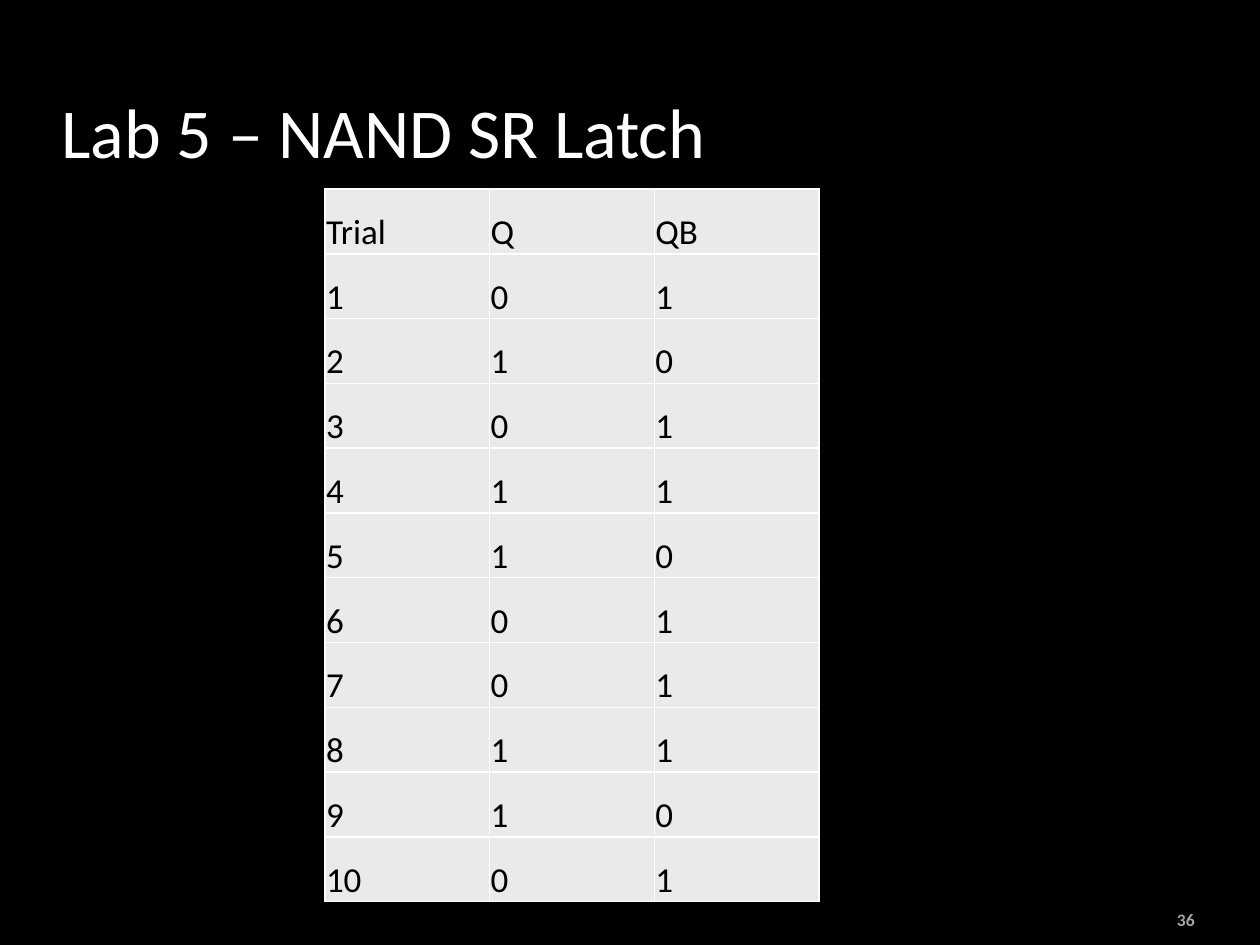
from lxml.etree import SubElement
from pptx import Presentation
from pptx.dml.color import RGBColor as Rgb
from pptx.enum.text import MSO_ANCHOR as Anchor, PP_ALIGN as Align
from pptx.oxml.ns import qn
from pptx.util import Pt

SCALE = 914400 / 126
FONT = "Calibri"
HUES = {"back": "000000", "title": "FFFFFF", "number": "A6A6A6",
        "cell": "E9EAEC", "text": "000000", "rule": "FFFFFF"}
ROWS = [("Trial", "Q", "QB"), ("1", "0", "1"), ("2", "1", "0"),
        ("3", "0", "1"), ("4", "1", "1"), ("5", "1", "0"),
        ("6", "0", "1"), ("7", "0", "1"), ("8", "1", "1"),
        ("9", "1", "0"), ("10", "0", "1")]


def px(num):
    """Turn px into EMU."""
    return round(num * SCALE)


def add_run(para, text, size, hue, bold=False):
    """Add one styled run to a paragraph."""
    run = para.add_run()
    run.text = text
    font = run.font
    font.name, font.size, font.bold = FONT, Pt(size), bold
    font.color.rgb = Rgb.from_string(HUES[hue])


def add_label(slide, box, text, size, hue, anchor, align, bold=False):
    """Place a line of text in its box."""
    frame = slide.shapes.add_textbox(*map(px, box)).text_frame
    frame.word_wrap = True
    frame.vertical_anchor = anchor
    para = frame.paragraphs[0]
    para.alignment = align
    add_run(para, text, size, hue, bold)


def add_rules(cell):
    """Draw the four borders and the fill of a cell."""
    props = cell._tc.get_or_add_tcPr()
    for side in ("lnL", "lnR", "lnT", "lnB"):
        line = SubElement(props, qn(f"a:{side}"), w=str(Pt(1)))
        fill = SubElement(line, qn("a:solidFill"))
        SubElement(fill, qn("a:srgbClr"), val=HUES["rule"])
    cell.fill.solid()
    cell.fill.fore_color.rgb = Rgb.from_string(HUES["cell"])


def add_trials(slide, box, rows):
    """Fill the box with an even grid of trial results."""
    left, top, wide, high = map(px, box)
    count, span = len(rows), len(rows[0])
    table = slide.shapes.add_table(count, span, left, top, wide, high).table
    table.horz_banding = False
    for col in table.columns:
        col.width = wide // span
    for line, values in zip(table.rows, rows):
        line.height = high // count
        for cell, value in zip(line.cells, values):
            cell.margin_left = cell.margin_right = cell.margin_top = px(1)
            cell.margin_bottom = 0
            cell.vertical_anchor = Anchor.BOTTOM
            add_run(cell.text_frame.paragraphs[0], value, 20, "text")
            add_rules(cell)


def main():
    """Build and save the slide."""
    deck = Presentation()
    deck.slide_width, deck.slide_height = px(1260), px(945)
    slide = deck.slides.add_slide(deck.slide_layouts[6])
    fill = slide.background.fill
    fill.solid()
    fill.fore_color.rgb = Rgb.from_string(HUES["back"])
    add_label(slide, (1086, 902, 121, 34), "36", 10, "number",
              Anchor.MIDDLE, Align.RIGHT, True)
    add_label(slide, (49, 32, 1058, 147), "Lab 5 – NAND SR Latch", 40,
              "title", Anchor.BOTTOM, Align.LEFT)
    add_trials(slide, (325, 189, 494, 713), ROWS)
    deck.save("out.pptx")


if __name__ == "__main__":
    main()
